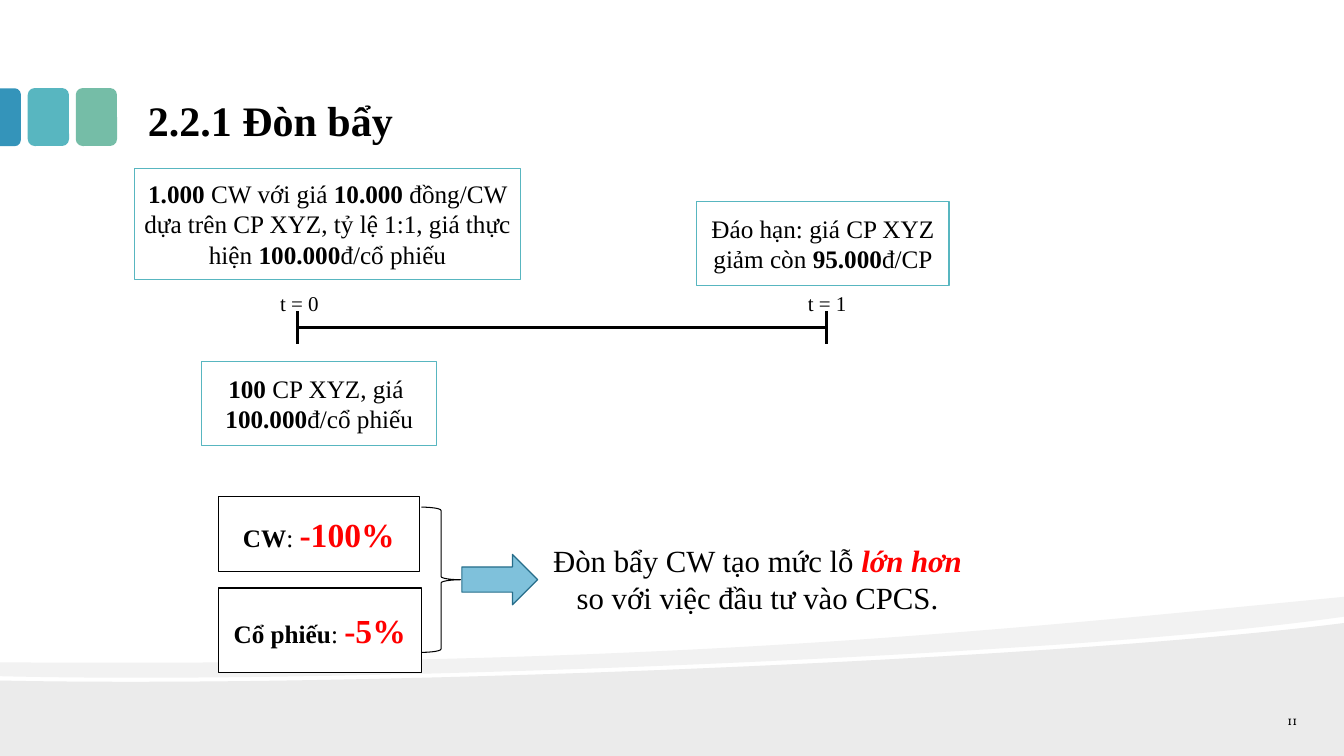
import pptx
import pptx.dml.color
import pptx.enum.shapes
import pptx.enum.text
import pptx.oxml
import pptx.oxml.ns
import pptx.util
from dataclasses import dataclass

Cm = pptx.util.Cm
Kind = pptx.enum.shapes.MSO_SHAPE
Anchor = pptx.enum.text.MSO_ANCHOR
Align = pptx.enum.text.PP_ALIGN


@dataclass(frozen=True)
class Theme:
    font: str = "Times New Roman"
    number_font: str = "Vollkorn"
    ink: str = "000000"
    paper: str = "FFFFFF"
    loss: str = "FF0000"
    blue: str = "3494BA"
    teal: str = "58B6C0"
    green: str = "75BDA7"
    arrow: str = "7FC1DB"
    arrow_edge: str = "266D8A"
    front_wave: str = "EBEBEB"
    back_wave: str = "F2F2F2"
    title: float = 30
    figure: float = 24
    conclusion: float = 22
    body: float = 18
    tick: float = 15
    number: float = 9
    edge: float = 0.85
    brace: float = 0.75
    axis: float = 2.25


THEME = Theme()
WIDTH, HEIGHT = 33.87, 19.05
BOLD = {"bold": True}
LOSS = {"bold": True, "color": THEME.loss}
BIG_LOSS = {**LOSS, "size": THEME.figure}

# Each span is (text, format); each box is (left, top, width, height) in cm.
TITLE = [("2.2.1 Đòn bẩy", BOLD)]
CONCLUSION = [("Đòn bẩy CW tạo mức lỗ ", {}),
              ("lớn hơn ", {**LOSS, "italic": True}),
              ("so với việc đầu tư vào CPCS.", {})]
PAGE_NUMBER = [("11", {"font": THEME.number_font})]
CARDS = [
    ((5.08, 9.11, 5.93, 2.12), THEME.teal,
     [("100", BOLD), (" CP XYZ, giá  ", {}), ("100.000", BOLD), ("đ/cổ phiếu", {})]),
    ((5.5, 12.52, 5.07, 1.89), THEME.ink,
     [("CW", BOLD), (": ", {}), ("-100%", BIG_LOSS)]),
    ((5.5, 14.82, 5.12, 2.12), THEME.ink,
     [("Cổ phiếu", BOLD), (": ", {}), ("-5%", BIG_LOSS)]),
    ((3.39, 4.24, 9.73, 2.8), THEME.teal,
     [("1.000", BOLD), (" CW với giá ", {}), ("10.000 ", BOLD),
      ("đồng/CW dựa trên CP XYZ, tỷ lệ 1:1, giá thực hiện ", {}),
      ("100.000", BOLD), ("đ/cổ phiếu", {})]),
    ((17.56, 5.08, 6.36, 2.12), THEME.teal,
     [("Đáo hạn: giá CP XYZ giảm còn ", {}), ("95.000", BOLD), ("đ/CP", {})]),
]
# Label, tick position, left edge of the label.
TICKS = [("t = 0", 7.49, 6.81), ("t = 1", 20.83, 20.11)]
AXIS_Y, TICK_HALF = 8.26, 0.42
TABS = [(Kind.ROUNDED_RECTANGLE, (1.91, 2.22, 1.04, 1.46), THEME.green, 0),
        (Kind.ROUNDED_RECTANGLE, (0.7, 2.22, 1.04, 1.46), THEME.teal, 0),
        (Kind.ROUND_2_SAME_RECTANGLE, (-0.47, 2.69, 1.46, 0.53), THEME.blue, 90)]
# A pair is a straight step; a triple of pairs is a Bézier step.
WAVES = [
    (THEME.front_wave, (WIDTH, 15.7),
     [(WIDTH, HEIGHT), (0, HEIGHT), (0, 17.15),
      ((8.94, 17.34), (26.47, 16.64), (WIDTH, 15.7))]),
    (THEME.back_wave, (WIDTH, 15.04),
     [(WIDTH, 15.54),
      ((31.9, 15.82), (29.18, 16.08), (26.14, 16.28)),
      ((17.73, 16.84), (6.55, 17.2), (0, 17.04)),
      (0, 16.69),
      ((16.56, 16.81), (24.66, 15.93), (WIDTH, 15.04))]),
]


def rgb(color):
    return pptx.dml.color.RGBColor.from_string(color)


def write(box, spans, size=THEME.body, align=Align.CENTER, anchor=Anchor.MIDDLE,
          inset=(0.25, 0.13)):
    frame = box.text_frame
    frame.word_wrap = True
    frame.vertical_anchor = anchor
    frame.margin_left = frame.margin_right = Cm(inset[0])
    frame.margin_top = frame.margin_bottom = Cm(inset[1])
    para = frame.paragraphs[0]
    para.alignment = align
    for text, style in spans:
        span = para.add_run()
        span.text = text
        span.font.name = style.get("font", THEME.font)
        span.font.size = pptx.util.Pt(style.get("size", size))
        span.font.bold = style.get("bold", False)
        span.font.italic = style.get("italic", False)
        span.font.color.rgb = rgb(style.get("color", THEME.ink))


def paint(shape, fill=None, line=None, weight=THEME.edge):
    shape.shadow.inherit = False
    if fill:
        shape.fill.solid()
        shape.fill.fore_color.rgb = rgb(fill)
    else:
        shape.fill.background()
    if line:
        shape.line.color.rgb = rgb(line)
        shape.line.width = pptx.util.Pt(weight)
    else:
        shape.line.fill.background()


def add_shape(page, kind, place, **look):
    shape = page.shapes.add_shape(kind, *map(Cm, place))
    paint(shape, **look)
    return shape


def add_text(page, place, spans, **layout):
    write(page.shapes.add_textbox(*map(Cm, place)), spans, **layout)


def add_axis_line(page, *ends):
    line = page.shapes.add_connector(pptx.enum.shapes.MSO_CONNECTOR.STRAIGHT,
                                     *map(Cm, ends))
    line.line.color.rgb = rgb(THEME.ink)
    line.line.width = pptx.util.Pt(THEME.axis)
    effects = pptx.oxml.parse_xml(f"<a:effectLst {pptx.oxml.ns.nsdecls('a')}/>")
    line._element.spPr.append(effects)


def add_wave(page, color, start, steps):
    """Lay out every point as a line, then join each Bézier triple into a curve."""
    is_curve = [len(step) == 3 for step in steps]
    points = [start]
    for step, curved in zip(steps, is_curve):
        points += step if curved else [step]
    outline = [(Cm(x), Cm(y)) for x, y in points]
    builder = page.shapes.build_freeform(*outline[0])
    builder.add_line_segments(outline[1:], close=True)
    wave = builder.convert_to_shape()
    paint(wave, fill=color)
    lines = iter(wave._element.xpath(".//a:path/a:lnTo"))
    for curved in is_curve:
        first = next(lines)
        if curved:
            curve = pptx.oxml.parse_xml(
                f"<a:cubicBezTo {pptx.oxml.ns.nsdecls('a')}/>")
            first.addprevious(curve)
            for line in (first, next(lines), next(lines)):
                curve.append(line[0])
                line.getparent().remove(line)


def add_timeline(page):
    (_, first, _), (_, last, _) = TICKS
    add_axis_line(page, first, AXIS_Y, last, AXIS_Y)
    for label, x, left in TICKS:
        add_axis_line(page, x, AXIS_Y - TICK_HALF, x, AXIS_Y + TICK_HALF)
        add_text(page, (left, 7.19, 1.7, 0.89), [(label, {})], size=THEME.tick,
                 align=Align.LEFT, anchor=Anchor.TOP)


def main():
    deck = pptx.Presentation()
    deck.slide_width, deck.slide_height = Cm(WIDTH), Cm(HEIGHT)
    page = deck.slides.add_slide(deck.slide_layouts[6])
    for wave in WAVES:
        add_wave(page, *wave)
    for kind, place, color, turn in TABS:
        tab = add_shape(page, kind, place, fill=color)
        tab.rotation = turn
        if turn:
            tab.adjustments[0] = 0.29
    add_text(page, (3.4, 2.05, 27.1, 1.78), TITLE, size=THEME.title,
             align=Align.LEFT, anchor=Anchor.BOTTOM, inset=(0.33, 0.18))
    add_text(page, (13.54, 13.52, 11.1, 2.13), CONCLUSION,
             size=THEME.conclusion, anchor=Anchor.TOP)
    add_shape(page, Kind.RIGHT_ARROW, (11.64, 13.97, 1.91, 1.27),
              fill=THEME.arrow, line=THEME.arrow_edge)
    add_timeline(page)
    for place, edge, spans in CARDS:
        card = add_shape(page, Kind.RECTANGLE, place, fill=THEME.paper, line=edge)
        write(card, spans, inset=(0.22, 0.13))
    add_shape(page, Kind.RIGHT_BRACE, (10.62, 12.78, 0.99, 3.66),
              line=THEME.ink, weight=THEME.brace)
    add_text(page, (30.76, 17.91, 2.26, 0.51), PAGE_NUMBER, size=THEME.number,
             align=Align.RIGHT, inset=(0.33, 0.18))
    deck.save("out.pptx")


if __name__ == "__main__":
    main()
